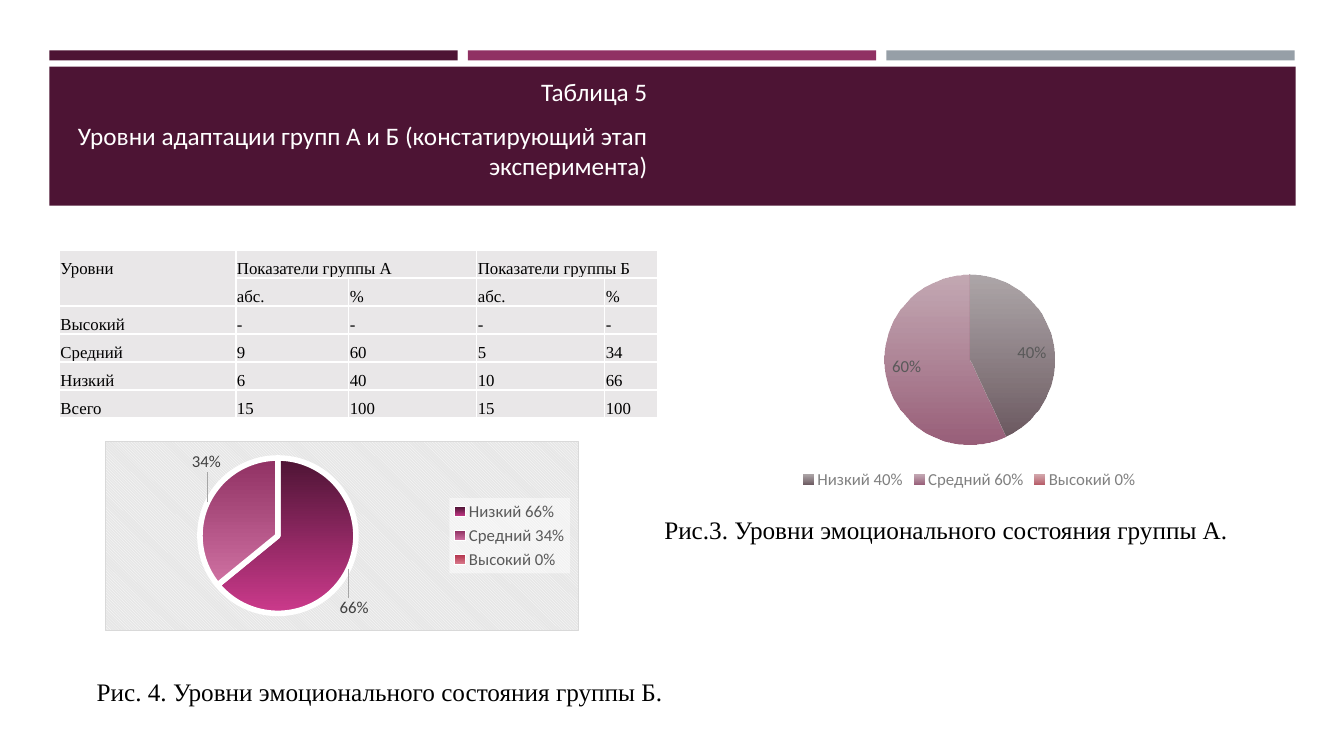
import pptx
import pptx.chart.data
import pptx.dml.color
import pptx.enum.chart
import pptx.enum.dml
import pptx.enum.shapes
import pptx.enum.text
import pptx.oxml
import pptx.oxml.ns
import pptx.util
from lxml import etree

Inches, Pt = pptx.util.Inches, pptx.util.Pt
ALIGN = pptx.enum.text.PP_ALIGN
LEGEND = pptx.enum.chart.XL_LEGEND_POSITION
LABEL = pptx.enum.chart.XL_LABEL_POSITION
HUES = {
    "plum": "4D1434", "berry": "903163", "steel": "969FA7", "white": "FFFFFF",
    "black": "000000", "cell": "E9E7E8", "stripe": "E6E6E6", "edge": "D9D9D9",
    "gray": "808080", "slate": "595959", "dark": "404040", "lead": "A6A6A6",
}
SOFT = [("A49C9F", "6C5A61"), ("BD9FAB", "995F79"), ("CF9FA4", "B75C68")]
RICH = [("4D1434", "CC3A8C"), ("903163", "CF71A2"), ("B2324B", "DA7B8D")]
SERIF, SANS = "Times New Roman", "Calibri"
NS = pptx.oxml.ns.nsdecls("a", "c")


def layout(x, y, w=None, h=None):
    """Return a manual chart layout in fractions of the chart."""
    inner = '<c:layoutTarget val="inner"/>' if w else ""
    modes = '<c:xMode val="edge"/><c:yMode val="edge"/>' if w else ""
    size = f'<c:w val="{w}"/><c:h val="{h}"/>' if w else ""
    return pptx.oxml.parse_xml(
        f'<c:layout {NS}><c:manualLayout>{inner}{modes}'
        f'<c:x val="{x}"/><c:y val="{y}"/>{size}</c:manualLayout></c:layout>')


def paint(key):
    """Return the XML of a solid fill."""
    return f'<a:solidFill><a:srgbClr val="{HUES[key]}"/></a:solidFill>'


class Deck:
    """Holds the style and the current slide."""

    def __init__(self):
        self.prs = pptx.Presentation()
        self.prs.slide_width, self.prs.slide_height = Inches(13.33), Inches(7.5)
        self.slide = self.prs.slides.add_slide(self.prs.slide_layouts[5])
        self.shapes = self.slide.shapes

    def hue(self, key):
        return pptx.dml.color.RGBColor.from_string(HUES.get(key, key))

    def style(self, font, size, key, face):
        font.size, font.name = Pt(size), face
        font.color.rgb = self.hue(key)

    def bar(self, box, key):
        kind = pptx.enum.shapes.MSO_SHAPE.RECTANGLE
        bar = self.shapes.add_shape(kind, *map(Inches, box))
        bar.shadow.inherit = False
        bar.fill.solid()
        bar.fill.fore_color.rgb = self.hue(key)
        bar.line.fill.background()

    def title(self, box, lines):
        title = self.shapes.title
        title.left, title.top, title.width, title.height = map(Inches, box)
        frame = title.text_frame
        frame.text = "\n".join(lines)
        frame.auto_size = pptx.enum.text.MSO_AUTO_SIZE.NONE
        frame.word_wrap = True
        frame.vertical_anchor = pptx.enum.text.MSO_ANCHOR.TOP
        frame.margin_top = Inches(0.01)
        for num, para in enumerate(frame.paragraphs):
            para.alignment = ALIGN.RIGHT
            para.space_before, para.space_after = Pt(3.6 if num else 0), Pt(6)
            self.style(para.font, 18, "white", SANS)
        title._element.getparent().append(title._element)

    def note(self, box, text):
        frame = self.shapes.add_textbox(*map(Inches, box)).text_frame
        frame.word_wrap = False
        frame.auto_size = pptx.enum.text.MSO_AUTO_SIZE.SHAPE_TO_FIT_TEXT
        para = frame.paragraphs[0]
        para.text, para.alignment, para.line_spacing = text, ALIGN.JUSTIFY, 1.5
        para._p.get_or_add_pPr().set("indent", str(Inches(0.49)))
        self.style(para.font, 18, "black", SERIF)

    def table(self, box, widths, rows, spans):
        table = self.shapes.add_table(
            len(rows), len(widths), *map(Inches, box)).table
        table.first_row = table.horz_banding = False
        for col, width in zip(table.columns, widths):
            col.width = Inches(width)
        for y, row in enumerate(rows):
            table.rows[y].height = Inches(0.18)
            for x, text in enumerate(row):
                cell = table.cell(y, x)
                cell.margin_left = cell.margin_right = Inches(0.01)
                cell.margin_top = cell.margin_bottom = 0
                cell.fill.solid()
                cell.fill.fore_color.rgb = self.hue("cell")
                for num, side in enumerate("LRTB"):
                    cell._tc.tcPr.insert(num, pptx.oxml.parse_xml(
                        f'<a:ln{side} {NS} w="12700">{paint("white")}</a:ln{side}>'))
                para = cell.text_frame.paragraphs[0]
                para.text, para.line_spacing = text, 1.5
                self.style(para.font, 12, "black", SERIF)
        for start, end in spans:
            table.cell(*start).merge(table.cell(*end))

    def pie(self, box, data, fills, marks, spot, plot, side, inks, rim=0):
        names, vals = zip(*data)
        info = pptx.chart.data.CategoryChartData()
        info.categories = names
        info.add_series("Series 1", vals)
        kind = pptx.enum.chart.XL_CHART_TYPE.PIE
        chart = self.shapes.add_chart(kind, *map(Inches, box), info).chart
        self.style(chart.font, 10, "black", SANS)
        chart.has_title = False
        chart.has_legend = True
        chart.legend.position = side
        chart.legend.include_in_layout = False
        self.style(chart.legend.font, 12, inks[0], SANS)
        chart.plots[0].vary_by_categories = True
        series = chart.plots[0].series[0]
        for num, pair in enumerate(fills):
            form = series.points[num].format
            form.fill.gradient()
            form.fill.gradient_angle = 270
            for stop, key in zip(form.fill.gradient_stops, pair):
                stop.color.rgb = self.hue(key)
            if rim:
                form.line.color.rgb = self.hue("white")
                form.line.width = Pt(rim)
            else:
                form.line.fill.background()
        series.data_labels.show_value = True
        self.style(series.data_labels.font, 12, inks[1], SANS)
        for num, (text, shift) in enumerate(marks):
            label = series.points[num].data_label
            run = label.text_frame.paragraphs[0].add_run()
            run.text = text
            self.style(run.font, 12, inks[1], SANS)
            label.position = spot
            if shift:
                item = series._element.xpath("c:dLbls/c:dLbl")[num]
                item.xpath("c:idx")[0].addnext(layout(*shift))
        series._element.xpath("c:dLbls/c:dLbl")[-1].addnext(
            pptx.oxml.parse_xml(f'<c:dLbl {NS}><c:idx val="{len(marks)}"/>'
                                '<c:delete val="1"/></c:dLbl>'))
        for item in series._element.xpath("c:dLbls/c:showLeaderLines"):
            item.addnext(pptx.oxml.parse_xml(
                f'<c:leaderLines {NS}><c:spPr><a:ln w="9525">{paint("lead")}'
                '</a:ln></c:spPr></c:leaderLines>'))
        area = chart._chartSpace.xpath("c:chart/c:plotArea")[0]
        for old in area.xpath("c:layout"):
            area.remove(old)
        area.insert(0, layout(*plot))
        return chart

    def fade(self, chart):
        for stop in chart._chartSpace.xpath(".//a:gs[1]/a:srgbClr"):
            tag = pptx.oxml.ns.qn("a:alpha")
            etree.SubElement(stop, tag).set("val", "90000")

    def back(self, chart):
        def ink(key):
            return f'<a:srgbClr val="{HUES[key]}"/>'
        chart._chartSpace.xpath("c:txPr")[0].addprevious(pptx.oxml.parse_xml(
            f'<c:spPr {NS}><a:pattFill prst="dkDnDiag">'
            f'<a:fgClr>{ink("white")}</a:fgClr><a:bgClr>{ink("stripe")}</a:bgClr>'
            f'</a:pattFill><a:ln w="9525">{paint("edge")}</a:ln></c:spPr>'))
        chart.legend._element.xpath("c:txPr")[0].addprevious(
            pptx.oxml.parse_xml(
                f'<c:spPr {NS}><a:solidFill><a:srgbClr val="{HUES["white"]}">'
                '<a:alpha val="50000"/></a:srgbClr></a:solidFill></c:spPr>'))


def main():
    deck = Deck()
    for num, key in enumerate(("plum", "berry", "steel")):
        deck.bar((0.49 + 4.15 * num, 0.5, 4.05, 0.1), key)
    deck.bar((0.49, 0.66, 12.36, 1.38), "plum")
    deck.title((0.59, 0.75, 5.93, 1.25), [
        "Таблица 5",
        "Уровни адаптации групп А и Б (констатирующий этап эксперимента)"])
    deck.table((0.59, 2.48, 5.93, 1.08), (1.75, 1.12, 1.27, 1.27, 0.52), [
        ("Уровни", "Показатели группы А", "", "Показатели группы Б", ""),
        ("", "абс.", "%", "абс.", "%"),
        ("Высокий", "-", "-", "-", "-"),
        ("Средний", "9", "60", "5", "34"),
        ("Низкий", "6", "40", "10", "66"),
        ("Всего", "15", "100", "15", "100"),
    ], [((0, 0), (1, 0)), ((0, 1), (0, 2)), ((0, 3), (0, 4))])
    soft = deck.pie(
        (7.33, 2.59, 4.57, 2.31),
        [("Низкий 40%", 6.2), ("Средний 60%", 8.2), ("Высокий 0%", 0)],
        SOFT, [("40%", None), ("60%", None)], LABEL.INSIDE_END,
        (0.31, 0.06, 0.38, 0.73), LEGEND.BOTTOM, ("gray", "slate"))
    deck.fade(soft)
    deck.note((6, 4.9, 6.34, 0.56),
              "Рис.3. Уровни эмоционального состояния группы А.")
    rich = deck.pie(
        (1.04, 4.37, 4.7, 1.89),
        [("Низкий 66%", 8.2), ("Средний 34%", 4.6), ("Высокий 0% ", 0)],
        RICH, [("66%", (-0.03, 0.14)), ("34%", (0.04, -0.15))],
        LABEL.OUTSIDE_END, (0.2, 0.08, 0.33, 0.84), LEGEND.RIGHT,
        ("slate", "dark"), 4)
    deck.back(rich)
    deck.note((0.37, 6.51, 6.37, 0.56),
              "Рис. 4. Уровни эмоционального состояния группы Б.")
    deck.prs.save("out.pptx")


if __name__ == "__main__":
    main()
